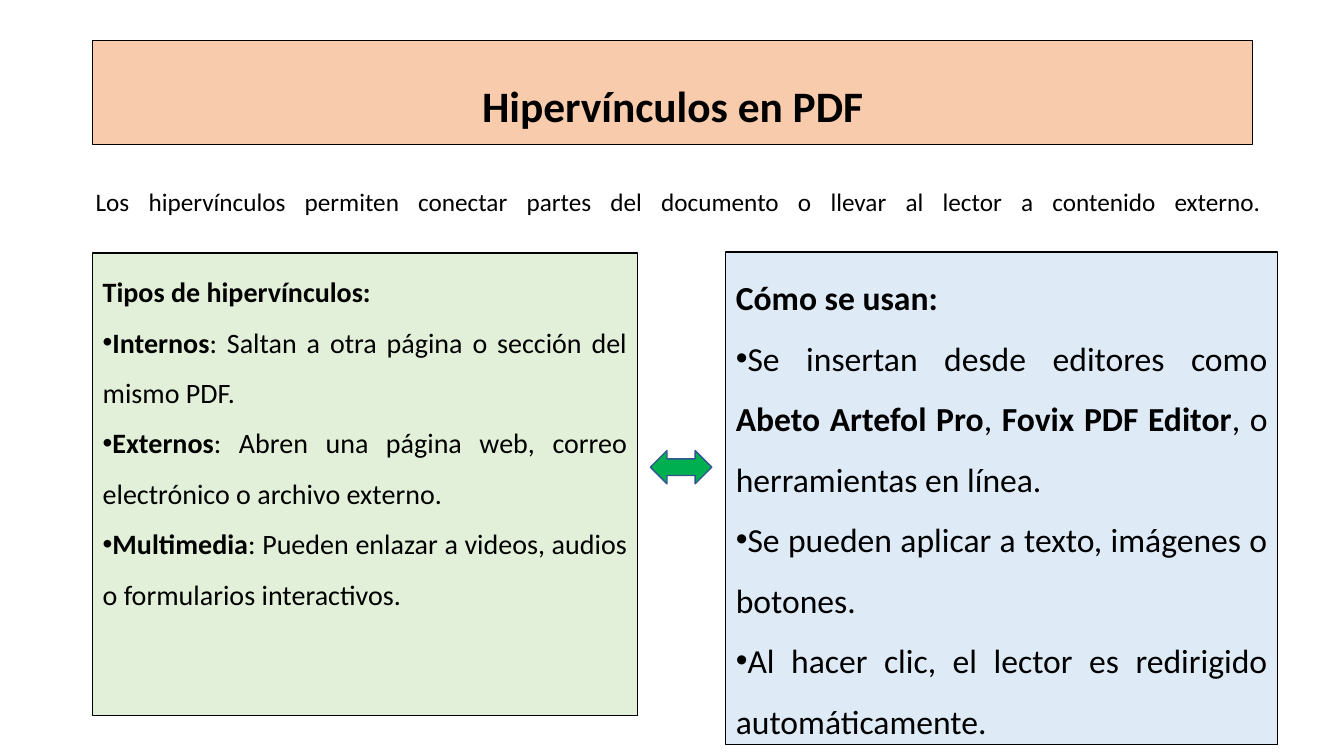
from dataclasses import dataclass

from lxml import etree
from pptx import Presentation
from pptx.dml.color import RGBColor
from pptx.enum.shapes import MSO_SHAPE
from pptx.enum.text import MSO_ANCHOR, PP_ALIGN
from pptx.oxml.ns import qn
from pptx.util import Inches, Pt

RECT = MSO_SHAPE.RECTANGLE
ARROW = MSO_SHAPE.LEFT_RIGHT_ARROW
TOP, MIDDLE = MSO_ANCHOR.TOP, MSO_ANCHOR.MIDDLE
CENTER, JUSTIFY = PP_ALIGN.CENTER, PP_ALIGN.JUSTIFY

FONT = "Calibri"
COLORS = {
    "ink": "000000",
    "peach": "F8CBAD",
    "mint": "E2F0D9",
    "sky": "DEEBF7",
    "green": "00B050",
    "edge": "325491",
}

Box = tuple[float, float, float, float]
Run = tuple[str, bool]  # text, bold


@dataclass
class Line:
    runs: list[Run]
    bullet: bool = False


@dataclass
class Panel:
    box: Box
    fill: str
    size: int
    lines: list[Line]
    align: PP_ALIGN = JUSTIFY
    anchor: MSO_ANCHOR = TOP


def color(name: str) -> RGBColor:
    return RGBColor.from_string(COLORS[name])


def add_bullet(para) -> None:
    props = para._p.get_or_add_pPr()
    props.set("marL", "0")
    props.set("indent", "0")
    font = etree.SubElement(props, qn("a:buFont"))
    font.set("typeface", "Arial")
    mark = etree.SubElement(props, qn("a:buChar"))
    mark.set("char", "•")


def style(para, size: int, align: PP_ALIGN) -> None:
    para.alignment = align
    para.line_spacing = 1.5
    para.font.name = FONT
    para.font.size = Pt(size)
    para.font.color.rgb = color("ink")


def write(frame, panel: Panel) -> None:
    frame.word_wrap = True
    frame.vertical_anchor = panel.anchor
    for i, line in enumerate(panel.lines):
        para = frame.add_paragraph() if i else frame.paragraphs[0]
        style(para, panel.size, panel.align)
        if line.bullet:
            add_bullet(para)
        same = len({bold for _, bold in line.runs}) == 1
        if same:
            para.font.bold = line.runs[0][1]
        for text, bold in line.runs:
            run = para.add_run()
            run.text = text
            if not same:
                run.font.bold = bold


def draw_shape(slide, kind: MSO_SHAPE, box: Box, fill: str, edge: str, width: float):
    shape = slide.shapes.add_shape(kind, *map(Inches, box))
    shape.shadow.inherit = False
    shape.fill.solid()
    shape.fill.fore_color.rgb = color(fill)
    shape.line.color.rgb = color(edge)
    shape.line.width = Pt(width)
    return shape


def draw_panel(slide, panel: Panel) -> None:
    shape = draw_shape(slide, RECT, panel.box, panel.fill, "ink", 0.75)
    write(shape.text_frame, panel)


def draw_intro(slide, box: Box, text: str) -> None:
    frame = slide.shapes.add_textbox(*map(Inches, box)).text_frame
    frame.word_wrap = True
    para = frame.paragraphs[0]
    style(para, 18, JUSTIFY)
    para.add_run().text = text
    para.add_line_break()  # stretches the justified line to full width


TITLE = Panel((0.92, 0.4, 11.5, 1.03), "peach", 31,
              [Line([("Hipervínculos en PDF", True)])], CENTER, MIDDLE)

INTRO = ("Los hipervínculos permiten conectar partes del documento "
         "o llevar al lector a contenido externo.")

TYPES = Panel((0.92, 2.51, 5.4, 4.59), "mint", 20, [
    Line([("Tipos de hipervínculos:", True)]),
    Line([("Internos", True),
          (": Saltan a otra página o sección del mismo PDF.", False)], True),
    Line([("Externos", True),
          (": Abren una página web, correo electrónico o archivo externo.", False)], True),
    Line([("Multimedia", True),
          (": Pueden enlazar a videos, audios o formularios interactivos.", False)], True),
])

USAGE = Panel((7.2, 2.5, 5.47, 4.89), "sky", 24, [
    Line([("Cómo se usan:", True)]),
    Line([("Se insertan desde editores como ", False), ("Abeto Artefol Pro", True),
          (", ", False), ("Fovix PDF Editor", True),
          (", o herramientas en línea.", False)], True),
    Line([("Se pueden aplicar a texto, imágenes o botones.", False)], True),
    Line([("Al hacer clic, el lector es redirigido automáticamente.", False)], True),
])


def main() -> None:
    deck = Presentation()
    deck.slide_width, deck.slide_height = Inches(13.33), Inches(7.5)
    slide = deck.slides.add_slide(deck.slide_layouts[6])

    # Title and introduction
    draw_panel(slide, TITLE)
    draw_intro(slide, (0.85, 1.65, 11.76, 0.96), INTRO)

    # Two panels joined by an arrow
    for panel in (TYPES, USAGE):
        draw_panel(slide, panel)
    draw_shape(slide, ARROW, (6.45, 4.47, 0.61, 0.33), "green", "edge", 1)

    deck.save("out.pptx")


if __name__ == "__main__":
    main()
